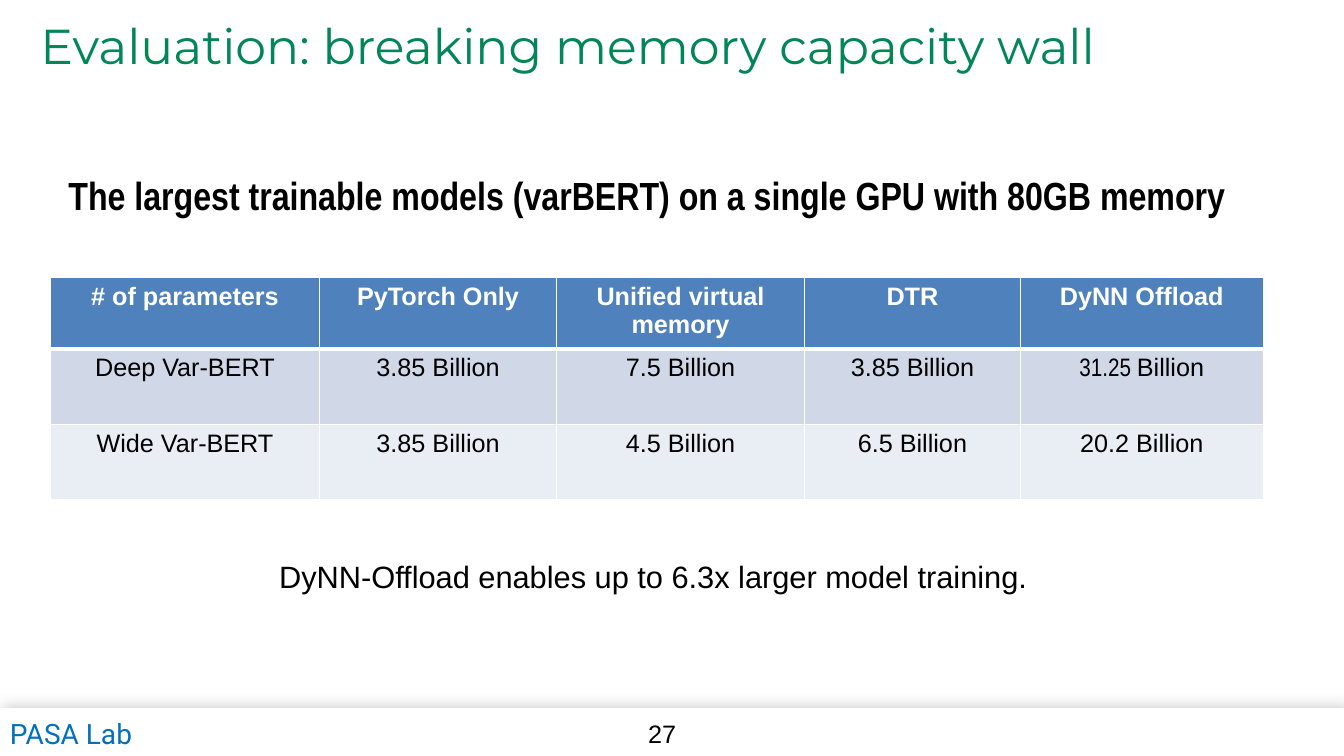
import pptx
import pptx.util
import pptx.dml.color
import pptx.enum.shapes
import pptx.enum.text
import pptx.oxml
import pptx.oxml.ns
from dataclasses import dataclass

Inches = pptx.util.Inches
Pt = pptx.util.Pt
PP_ALIGN = pptx.enum.text.PP_ALIGN
MSO_ANCHOR = pptx.enum.text.MSO_ANCHOR


@dataclass(frozen=True)
class Theme:
    green: str = "008657"
    blue: str = "0070C0"
    black: str = "000000"
    white: str = "FFFFFF"
    header: str = "4F81BD"
    bands: tuple = ("D0D8E8", "E9EDF4")
    title_font: str = "Montserrat"
    lab_font: str = "Roboto"
    body_font: str = "Arial"
    narrow_font: str = "Arial Narrow"
    title_size: int = 35
    heading_size: int = 28
    finding_size: int = 22
    lab_size: int = 20
    table_size: int = 18


T = Theme()
TITLE = "Evaluation: breaking memory capacity wall"
HEADING = "The largest trainable models (varBERT) on a single GPU with 80GB memory"
FINDING = "DyNN-Offload enables up to 6.3x larger model training."
LAB = "PASA Lab"
PAGE = "27"
ROWS = [
    ["# of parameters", "PyTorch Only", "Unified virtual memory", "DTR", "DyNN Offload"],
    ["Deep Var-BERT", "3.85 Billion", "7.5 Billion", "3.85 Billion",
     [("31.25 ", T.narrow_font), ("Billion", T.body_font)]],
    ["Wide Var-BERT", "3.85 Billion", "4.5 Billion", "6.5 Billion", "20.2 Billion"],
]
COL_WIDTHS = [2.67, 2.35, 2.46, 2.14, 2.41]
ROW_HEIGHTS = [0.71, 0.75, 0.75]
SLIDE_W, SLIDE_H = 13.33, 7.5
FOOTER_TOP = 7.03


def rgb(value):
    return pptx.dml.color.RGBColor.from_string(value)


def add_run(p, text, font, size, color, bold=False):
    r = p.add_run()
    r.text = text
    r.font.name = font
    r.font.size = Pt(size)
    r.font.bold = bold
    r.font.color.rgb = rgb(color)


def add_text(s, box, text, font, size, color, bold=False, wrap=True):
    sp = s.shapes.add_textbox(*map(Inches, box))
    tf = sp.text_frame
    tf.word_wrap = wrap
    add_run(tf.paragraphs[0], text, font, size, color, bold)
    return tf


def add_footer(s):
    sp = s.shapes.add_shape(pptx.enum.shapes.MSO_SHAPE.RECTANGLE, 0, Inches(FOOTER_TOP),
                            Inches(SLIDE_W), Inches(SLIDE_H - FOOTER_TOP))
    sp.fill.solid()
    sp.fill.fore_color.rgb = rgb(T.white)
    sp.line.color.rgb = rgb(T.white)
    sp.line.width = Pt(0.75)
    sp.shadow.inherit = False
    effects = sp._element.spPr.find(pptx.oxml.ns.qn("a:effectLst"))
    effects.append(pptx.oxml.parse_xml(
        f'<a:outerShdw {pptx.oxml.ns.nsdecls("a")} blurRad="{Pt(10)}" dist="{Pt(3)}" '
        f'dir="{315 * 60000}" rotWithShape="0"><a:srgbClr val="{T.black}">'
        '<a:alpha val="20000"/></a:srgbClr></a:outerShdw>'))
    add_text(s, (0, 7.06, 1.49, 0.44), LAB, T.lab_font, T.lab_size, T.blue, wrap=False)
    add_text(s, (6.33, 7.08, 0.82, 0.4), PAGE, T.body_font, T.table_size, T.black)


def add_title(s):
    sp = s.shapes.title
    sp.left, sp.top, sp.width, sp.height = map(Inches, (0.3, 0.19, 12, 0.61))
    tf = sp.text_frame
    tf.word_wrap = True
    tf.vertical_anchor = MSO_ANCHOR.MIDDLE
    p = tf.paragraphs[0]
    p.alignment = PP_ALIGN.LEFT
    p.line_spacing = 0.85
    add_run(p, TITLE, T.title_font, T.title_size, T.green)


def set_borders(cell, top, bottom):
    tcPr = cell._tc.get_or_add_tcPr()
    for side, width in (("L", 1), ("R", 1), ("T", top), ("B", bottom)):
        tcPr.append(pptx.oxml.parse_xml(
            f'<a:ln{side} {pptx.oxml.ns.nsdecls("a")} w="{Pt(width)}"><a:solidFill>'
            f'<a:srgbClr val="{T.white}"/></a:solidFill></a:ln{side}>'))


def add_results(s):
    table = s.shapes.add_table(len(ROWS), len(COL_WIDTHS), Inches(0.5), Inches(2.75),
                               Inches(sum(COL_WIDTHS)), Inches(sum(ROW_HEIGHTS))).table
    for col, width in zip(table.columns, COL_WIDTHS):
        col.width = Inches(width)
    for row, height in zip(table.rows, ROW_HEIGHTS):
        row.height = Inches(height)
    for i, values in enumerate(ROWS):
        is_header = i == 0
        fill = T.header if is_header else T.bands[(i - 1) % 2]
        for j, value in enumerate(values):
            cell = table.cell(i, j)
            set_borders(cell, 3 if i == 1 else 1, 3 if is_header else 1)
            cell.fill.solid()
            cell.fill.fore_color.rgb = rgb(fill)
            p = cell.text_frame.paragraphs[0]
            p.alignment = PP_ALIGN.CENTER
            runs = [(value, T.body_font)] if isinstance(value, str) else value
            for text, font in runs:
                add_run(p, text, font, T.table_size,
                        T.white if is_header else T.black, is_header)


def main():
    prs = pptx.Presentation()
    prs.slide_width, prs.slide_height = Inches(SLIDE_W), Inches(SLIDE_H)
    s = prs.slides.add_slide(prs.slide_layouts[5])
    add_footer(s)
    add_title(s)
    tf = add_text(s, (0.58, 1.7, 11.95, 0.53), HEADING, T.narrow_font,
                  T.heading_size, T.black, bold=True)
    tf.paragraphs[0].line_spacing = 0.9
    add_results(s)
    add_text(s, (2.67, 5.48, 7.72, 0.47), FINDING, T.body_font,
             T.finding_size, T.black, wrap=False)
    prs.save("out.pptx")


if __name__ == "__main__":
    main()
